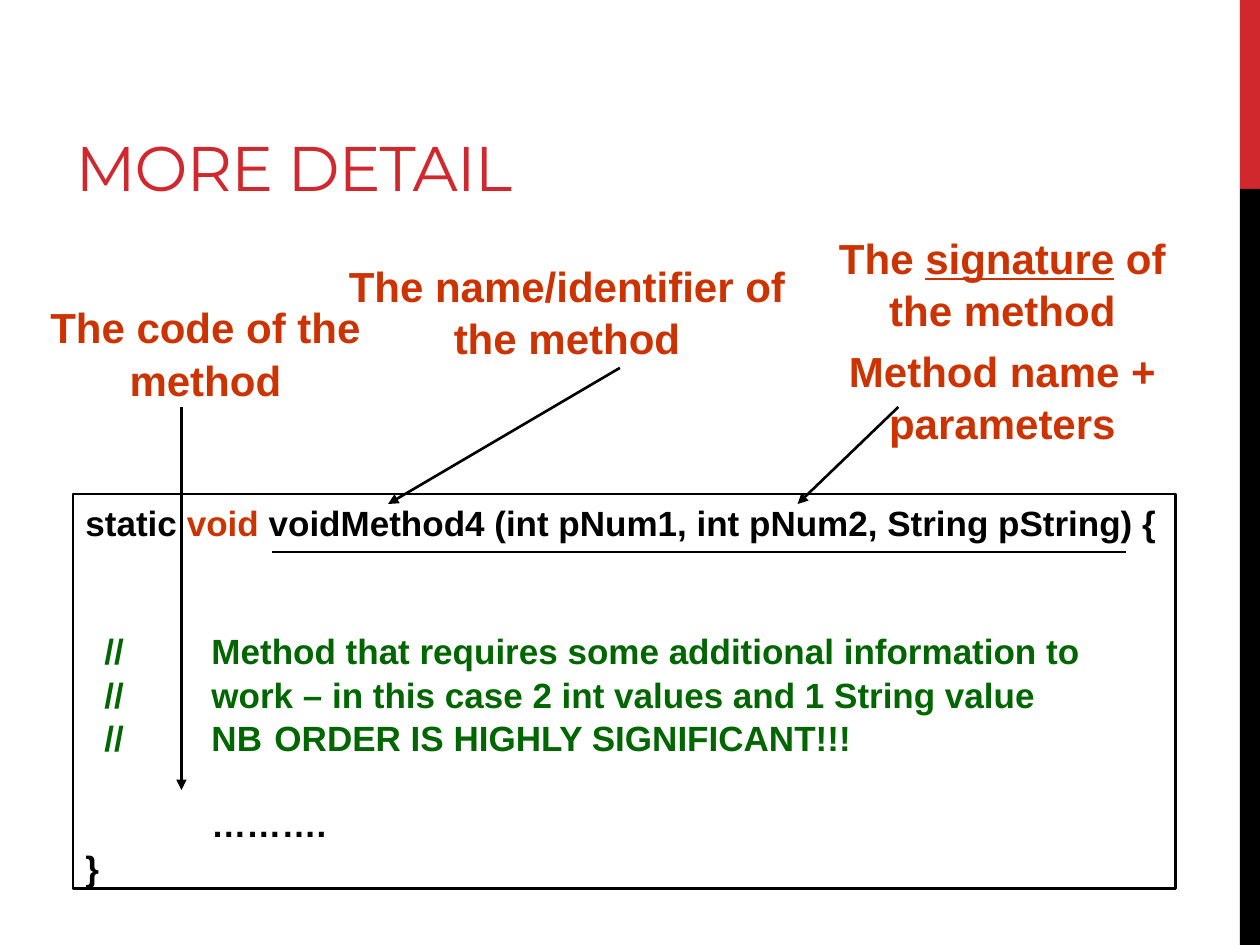
import pptx
import pptx.dml.color
import pptx.enum.shapes
import pptx.enum.text
import pptx.oxml.ns
import pptx.util
from dataclasses import dataclass
from lxml import etree

Inches, Pt = pptx.util.Inches, pptx.util.Pt
Color = pptx.dml.color.RGBColor
Align, Anchor = pptx.enum.text.PP_ALIGN, pptx.enum.text.MSO_ANCHOR
qn = pptx.oxml.ns.qn

RED = Color(0xD1, 0x28, 0x2E)
RUST = Color(0xCC, 0x33, 0x00)
GREEN = Color(0x00, 0x66, 0x00)
BLACK = Color(0, 0, 0)
LEADING = 1.04


@dataclass
class Line:
    start: tuple
    end: tuple
    arrow: bool = True


@dataclass
class Label:
    box: tuple
    paras: list


def write(para, text: str, *, size: float, color: Color, font: str = "Arial",
          bold: bool = True, under: bool = False):
    run = para.add_run()
    run.text = text
    face = run.font
    face.name, face.size, face.bold = font, Pt(size), bold
    face.color.rgb = color
    if under:
        face.underline = True
    return run


def next_para(frame, first: bool, align, before: float = 0):
    para = frame.paragraphs[0] if first else frame.add_paragraph()
    para.alignment = align
    para.line_spacing = LEADING
    para.space_before = Pt(before)
    return para


def add_rect(slide, box: tuple, fill: Color = None):
    rect = slide.shapes.add_shape(pptx.enum.shapes.MSO_SHAPE.RECTANGLE,
                                  *map(Inches, box))
    rect.shadow.inherit = False
    if fill is None:
        rect.fill.background()
        rect.line.color.rgb = BLACK
        rect.line.width = Pt(1.5)
    else:
        rect.fill.solid()
        rect.fill.fore_color.rgb = fill
        rect.line.fill.background()
    return rect


def add_line(slide, line: Line) -> None:
    link = slide.shapes.add_connector(
        pptx.enum.shapes.MSO_CONNECTOR.STRAIGHT,
        *map(Inches, line.start + line.end))
    link.line.color.rgb = BLACK
    link.line.width = Pt(1.5)
    if line.arrow:
        etree.SubElement(link.line._get_or_add_ln(), qn("a:tailEnd"),
                         type="triangle")
    etree.SubElement(link._element.spPr, qn("a:effectLst"))


def add_label(slide, label: Label) -> None:
    frame = slide.shapes.add_textbox(*map(Inches, label.box)).text_frame
    frame.word_wrap = True
    for i, runs in enumerate(label.paras):
        para = next_para(frame, i == 0, Align.CENTER, 4.8 if i else 0)
        for text, under in runs:
            write(para, text, size=24, color=RUST, under=under)


def add_code(slide, box: tuple, rows: list) -> None:
    frame = add_rect(slide, box).text_frame
    frame.word_wrap = True
    frame.vertical_anchor = Anchor.TOP
    for i, (runs, before, margin, indent) in enumerate(rows):
        para = next_para(frame, i == 0, Align.LEFT, before)
        props = para._p.get_or_add_pPr()
        props.set("marL", str(Inches(margin)))
        props.set("indent", str(Inches(indent)))
        for text, color in runs:
            write(para, text, size=20, color=color)


# Code rows: runs, space before, left margin, first-line indent
NOTES = ["Method that requires some additional information to",
         "work – in this case 2 int values and 1 String value",
         "NB\tORDER IS HIGHLY SIGNIFICANT!!!"]
ROWS = [
    ([("static ", BLACK), ("void ", RUST),
      ("voidMethod4 (int pNum1, int pNum2, String pString) {", BLACK)], 0, 0, 0),
    *[([("//\t" + note, GREEN)], 0 if i else 48, 1, -0.85)
      for i, note in enumerate(NOTES)],
    ([("……….", BLACK)], 24, 1, 0),
    ([("}", BLACK)], 0, 0, 0),
]
LABELS = [
    Label((6.33, 1.78, 3.25, 1.8),
          [[("The ", False), ("signature", True), (" of the method", False)],
           [("Method name + parameters", False)]]),
    Label((2.5, 2, 4, 0.9), [[("The name/identifier of the method", False)]]),
    Label((0.17, 2.33, 2.92, 0.9), [[("The code of the method", False)]]),
]
LINES = [
    Line((2.16, 4.38), (8.94, 4.38), arrow=False),
    Line((7.13, 3.23), (6.33, 4)),
    Line((4.92, 2.92), (3.08, 4)),
    Line((1.44, 3.23), (1.44, 6.27)),
]


def main() -> None:
    deck = pptx.Presentation()
    deck.slide_width, deck.slide_height = Inches(10), Inches(7.5)
    slide = deck.slides.add_slide(deck.slide_layouts[5])

    # Side band
    add_rect(slide, (9.84, 0, 0.16, 1.5), RED)
    add_rect(slide, (9.84, 1.5, 0.16, 6), BLACK)

    # Title
    title = slide.shapes.title
    title.left, title.top = Inches(0.5), Inches(0.17)
    title.width, title.height = Inches(6.33), Inches(1.5)
    title.text_frame.vertical_anchor = Anchor.BOTTOM
    head = title.text_frame.paragraphs[0]
    head.alignment = Align.LEFT
    run = write(head, "MORE DETAIL", size=36, color=RED, font="Montserrat",
                bold=False)
    run.font._element.set("spc", "-60")

    # Code box, callouts and their arrows
    add_code(slide, (0.58, 3.92, 8.75, 3.13), ROWS)
    for label in LABELS:
        add_label(slide, label)
    for line in LINES:
        add_line(slide, line)

    deck.save("out.pptx")


if __name__ == "__main__":
    main()
